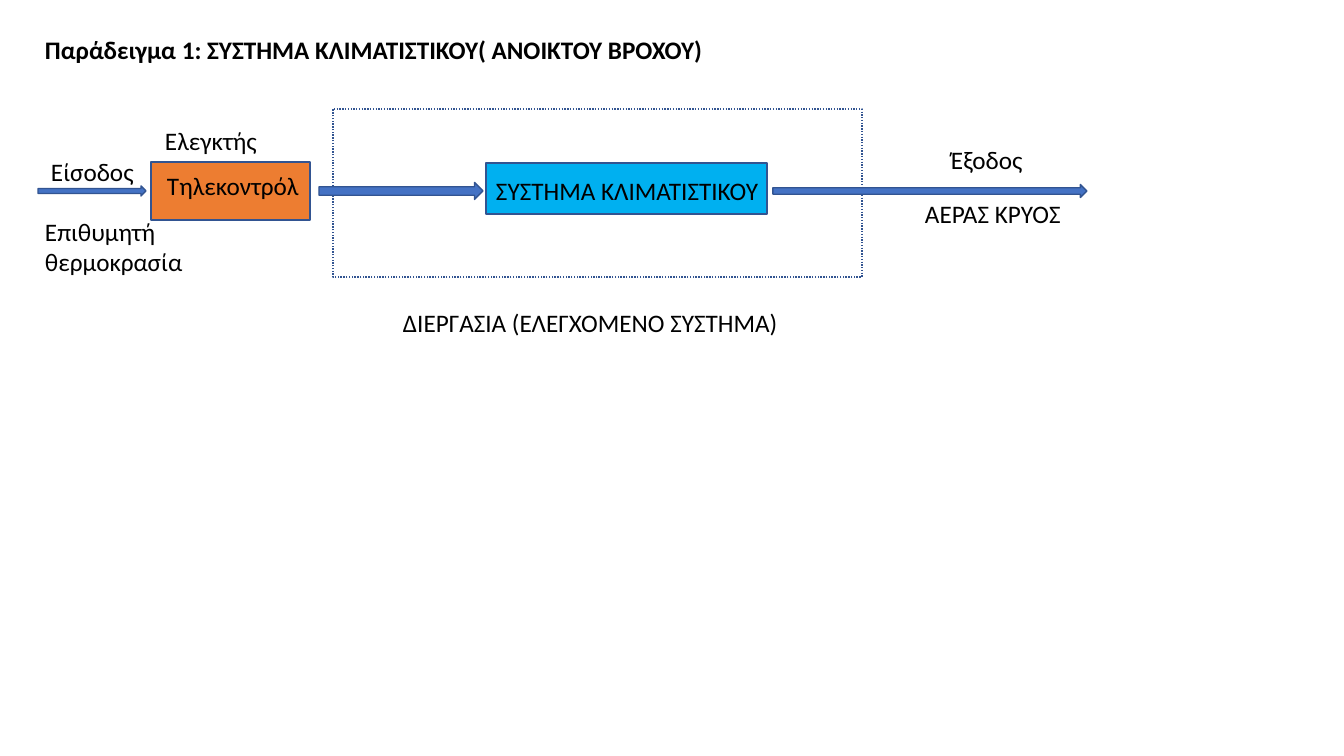
from pptx import Presentation
from pptx.dml.color import RGBColor
from pptx.enum.dml import MSO_LINE
from pptx.enum.shapes import MSO_SHAPE
from pptx.enum.text import MSO_ANCHOR, PP_ALIGN
from pptx.util import Pt

PX = 9071.43  # EMU per px
COLORS = {"text": "000000", "edge": "325491", "arrow": "4472C4",
          "system": "00B0F0", "remote": "ED7D31"}


def write(frame, text, bold=False, left=10, top=5, right=0):
    frame.word_wrap = True
    frame.vertical_anchor = MSO_ANCHOR.TOP
    frame.margin_left, frame.margin_top = round(left * PX), round(top * PX)
    frame.margin_right, frame.margin_bottom = round(right * PX), 0
    for i, line in enumerate(text.split("\n")):
        par = frame.paragraphs[0] if i == 0 else frame.add_paragraph()
        par.alignment = PP_ALIGN.LEFT
        run = par.add_run()
        run.text = line
        run.font.name, run.font.size, run.font.bold = "Calibri", Pt(18), bold
        run.font.color.rgb = RGBColor.from_string(COLORS["text"])


def draw(kind, box, fill=None):
    shape = slide.shapes.add_shape(kind, *(round(v * PX) for v in box))
    shape.shadow.inherit = False
    if fill:
        shape.fill.solid()
        shape.fill.fore_color.rgb = RGBColor.from_string(COLORS[fill])
    else:
        shape.fill.background()
    shape.line.color.rgb = RGBColor.from_string(COLORS["edge"])
    shape.line.width = Pt(1)
    return shape


deck = Presentation()
deck.slide_width, deck.slide_height = round(1344 * PX), round(756 * PX)
slide = deck.slides.add_slide(deck.slide_layouts[6])

# Title and labels: left, top, width, height, text, bold
labels = [
    (35, 29, 1265, 40, "Παράδειγμα 1: ΣΥΣΤΗΜΑ ΚΛΙΜΑΤΙΣΤΙΚΟΥ( ΑΝΟΙΚΤΟΥ ΒΡΟΧΟΥ)", True),
    (155, 120, 130, 40, "Ελεγκτής", False),
    (41, 151, 110, 40, "Είσοδος", False),
    (35, 211, 170, 70, "Επιθυμητή\nθερμοκρασία", False),
    (393, 302, 420, 40, "ΔΙΕΡΓΑΣΙΑ (ΕΛΕΓΧΟΜΕΝΟ ΣΥΣΤΗΜΑ)", False),
    (941, 139, 100, 40, "Έξοδος", False),
    (915, 193, 165, 40, "ΑΕΡΑΣ ΚΡΥΟΣ", False),
]
for *box, text, bold in labels:
    area = slide.shapes.add_textbox(*(round(v * PX) for v in box))
    write(area.text_frame, text, bold=bold)

# Process frame
process = draw(MSO_SHAPE.RECTANGLE, (333, 109, 529, 168))
process.line.dash_style = MSO_LINE.ROUND_DOT

# Controller and controlled system
remote = draw(MSO_SHAPE.RECTANGLE, (151, 162, 159, 58), "remote")
write(remote.text_frame, "Τηλεκοντρόλ", left=16, top=8)
system = draw(MSO_SHAPE.RECTANGLE, (486, 163, 281, 51), "system")
write(system.text_frame, "ΣΥΣΤΗΜΑ ΚΛΙΜΑΤΙΣΤΙΚΟΥ", top=12)

# Signal flow
for left, width, height in [(38, 108, 10), (319, 164, 17), (773, 314, 13)]:
    draw(MSO_SHAPE.RIGHT_ARROW, (left, 191 - height / 2, width, height), "arrow")

deck.save("out.pptx")
